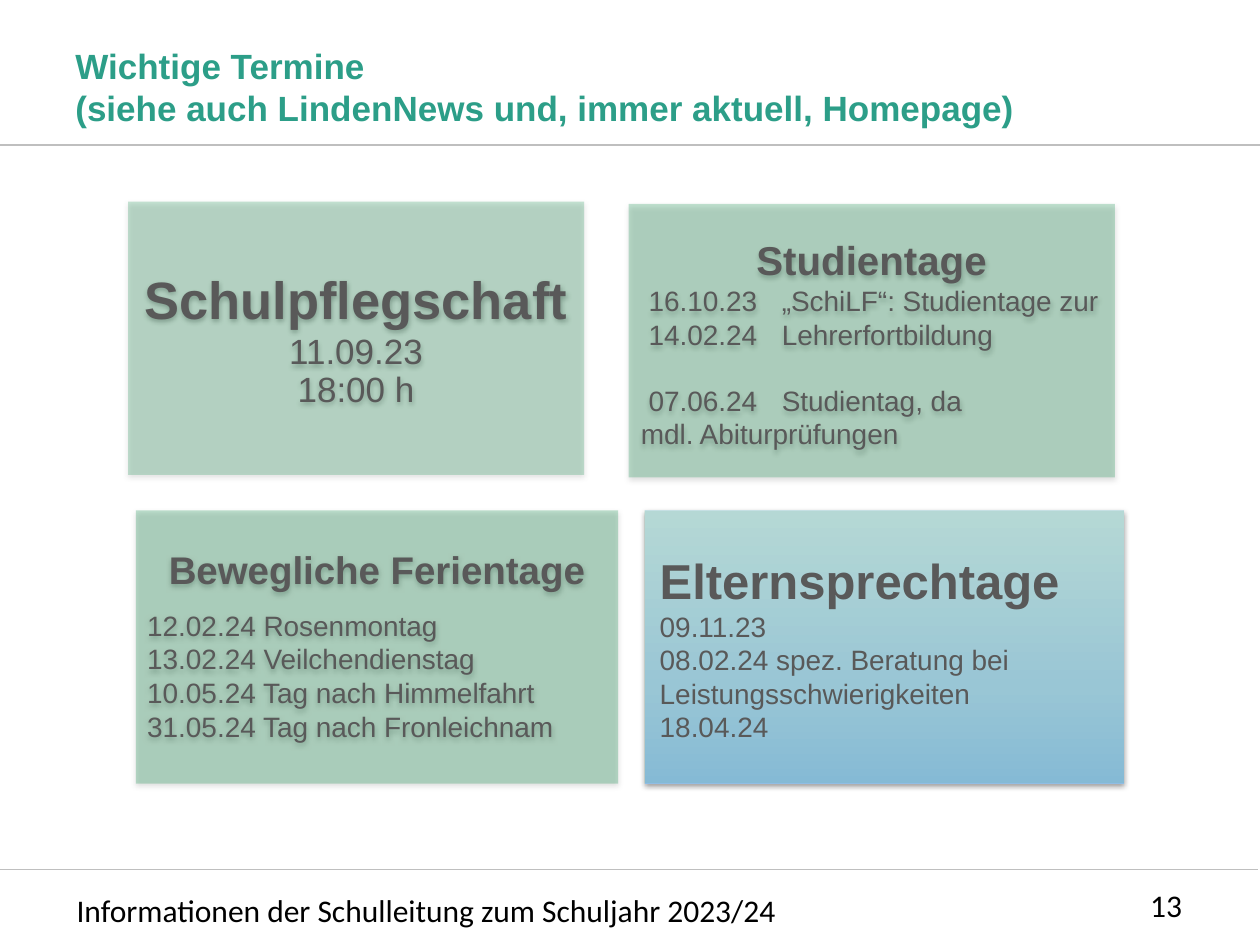
import pptx
import pptx.dml.color
import pptx.enum.shapes
import pptx.enum.text
import pptx.util
from dataclasses import dataclass
from lxml import etree
from pptx.oxml.ns import qn

Pt = pptx.util.Pt
Align = pptx.enum.text.PP_ALIGN
Anchor = pptx.enum.text.MSO_ANCHOR


@dataclass(frozen=True)
class Theme:
    title: str = "2C9E88"
    text: str = "595959"
    footer: str = "000000"
    rule: str = "BFBFBF"
    card: str = "38A26A"
    shadow: str = "000000"
    gradient: tuple = ((0, "A4C4FF"), (35, "BFD4FF"), (100, "E6EEFF"))
    font: str = "Arial"
    footer_font: str = "Calibri"
    title_size: int = 20
    date_size: int = 20
    body_size: int = 16
    footer_size: int = 18


THEME = Theme()
WIDTH, HEIGHT = 720, 540


def rgb(color):
    return pptx.dml.color.RGBColor.from_string(color)


def set_values(target, values):
    for name, value in values.items():
        setattr(target, name, value)


def add_node(parent, tag, **attributes):
    node = etree.SubElement(parent, qn(tag))
    for name, value in attributes.items():
        node.set(name, str(value))
    return node


def line(text, size, color=THEME.text, font=THEME.font, bold=False, tab=None, **layout):
    """Describe one paragraph of text."""
    style = {"size": Pt(size), "name": font, "bold": bold}
    return {"text": text, "style": style, "color": color, "tab": tab, "layout": layout}


def fill_text(shape, lines, anchor=Anchor.TOP, inset=(7.2, 3.6, 7.2, 3.6)):
    frame = shape.text_frame
    left, top, right, bottom = map(Pt, inset)
    set_values(frame, {"word_wrap": True, "vertical_anchor": anchor,
                       "margin_left": left, "margin_top": top,
                       "margin_right": right, "margin_bottom": bottom})
    for index, item in enumerate(lines):
        paragraph = frame.add_paragraph() if index else frame.paragraphs[0]
        set_values(paragraph, {"alignment": Align.LEFT, **item["layout"]})
        if item["tab"]:
            tabs = add_node(paragraph._p.get_or_add_pPr(), "a:tabLst")
            add_node(tabs, "a:tab", pos=int(Pt(item["tab"])), algn="l")
        run = paragraph.add_run()
        run.text = item["text"]
        set_values(run.font, item["style"])
        run.font.color.rgb = rgb(item["color"])


def add_text(slide, box, lines, **options):
    fill_text(slide.shapes.add_textbox(*map(Pt, box)), lines, **options)


def add_rule(slide, left, top, width):
    rule = slide.shapes.add_connector(
        pptx.enum.shapes.MSO_CONNECTOR.STRAIGHT, Pt(left), Pt(top), Pt(left + width), Pt(top))
    rule.line.color.rgb = rgb(THEME.rule)
    rule.line.width = Pt(1)
    add_node(rule._element.spPr, "a:effectLst")


def add_rectangle(slide, box):
    shape = slide.shapes.add_shape(
        pptx.enum.shapes.MSO_SHAPE.RECTANGLE, *map(Pt, box))
    shape.shadow.inherit = False
    shape.line.fill.background()
    return shape


def tint(shape, opacity):
    shape.fill.solid()
    shape.fill.fore_color.rgb = rgb(THEME.card)
    color = shape._element.spPr.find(".//" + qn("a:srgbClr"))
    add_node(color, "a:alpha", val=opacity * 1000)


def add_shadow(shape):
    effects = shape._element.spPr.find(qn("a:effectLst"))
    shadow = add_node(effects, "a:outerShdw", blurRad=int(Pt(3.1)), dist=int(Pt(1.6)),
                      dir=5400000, rotWithShape=0)
    color = add_node(shadow, "a:srgbClr", val=THEME.shadow)
    add_node(color, "a:alpha", val=38000)


def add_gradient(shape):
    """Shade from the first stop at the bottom to the last at the top."""
    shape.fill.gradient()
    gradient = shape._element.spPr.find(qn("a:gradFill"))
    for child in list(gradient):
        gradient.remove(child)
    stops = add_node(gradient, "a:gsLst")
    for position, color in THEME.gradient:
        stop = add_node(stops, "a:gs", pos=position * 1000)
        add_node(stop, "a:srgbClr", val=color)
    add_node(gradient, "a:lin", ang=16200000, scaled=0)


def add_card(slide, box, opacity, lines, inset, shaded=False):
    if shaded:
        backing = add_rectangle(slide, box)
        add_gradient(backing)
        add_shadow(backing)
    card = add_rectangle(slide, box)
    tint(card, opacity)
    if not shaded:
        add_shadow(card)
    fill_text(card, lines, Anchor.MIDDLE, inset)


def add_header(slide, box):
    left, top, width, height = box
    add_rule(slide, left, top + height, width)
    titles = ("Wichtige Termine", "(siehe auch LindenNews und, immer aktuell, Homepage)")
    add_text(slide, (left + 36, top + 21.6, width - 72, 55.4),
             [line(text, THEME.title_size, THEME.title, bold=True) for text in titles],
             anchor=Anchor.MIDDLE)


def add_dates(slide, box):
    left, top, width, height = box
    row_height = 156.2
    second_row = top + height - row_height
    body = THEME.body_size
    centered = {"alignment": Align.CENTER}
    tight = {**centered, "line_spacing": 0.9}

    # School council
    add_card(slide, (left, top, 260.6, row_height), 28, [
        line("Schulpflegschaft", 30, bold=True, **centered),
        line("11.09.23", THEME.date_size, **centered),
        line("18:00 h", THEME.date_size, **tight),
    ], (8.6,) * 4)

    # Study days
    add_card(slide, (left + 286, top + 1.4, 277.9, row_height), 31, [
        line("Studientage", 23, bold=True, **tight),
        line(" 16.10.23\t„SchiLF“: Studientage zur", body, tab=80.6),
        line(" 14.02.24\tLehrerfortbildung", body, tab=80.6),
        line(" 07.06.24\tStudientag, da", body, tab=80.6, space_before=Pt(18.4)),
        line("mdl. Abiturprüfungen", body),
    ], (7, 12.4, 7, 7))

    # Movable holidays
    holidays = ("12.02.24 Rosenmontag", "13.02.24 Veilchendienstag",
                "10.05.24 Tag nach Himmelfahrt", "31.05.24 Tag nach Fronleichnam")
    add_card(slide, (left + 4.4, second_row, 275.6, row_height), 32, [
        line("Bewegliche Ferientage", 22, bold=True, space_after=Pt(9), **tight),
        *[line(text, body) for text in holidays],
    ], (6.5,) * 4)

    # Parents' days
    meetings = ("09.11.23", "08.02.24 spez. Beratung bei Leistungsschwierigkeiten", "18.04.24")
    add_card(slide, (left + 295.2, second_row, 273.9, row_height), 28, [
        line("Elternsprechtage", 28, bold=True),
        *[line(text, body) for text in meetings],
    ], (8.6,) * 4, shaded=True)


def add_footer(slide, box):
    left, top, width, height = box
    style = {"size": THEME.footer_size, "color": THEME.footer, "font": THEME.footer_font}
    add_rule(slide, left, top, width - 1.4)
    add_text(slide, (left + 36.7, top + 8.7, 460, 29),
             [line("Informationen der Schulleitung zum Schuljahr 2023/24", **style)])
    add_text(slide, (left + 514.8, top + 5.8, 167.8, 29),
             [line("13", alignment=Align.RIGHT, **style)])


def main():
    presentation = pptx.Presentation()
    set_values(presentation, {"slide_width": Pt(WIDTH), "slide_height": Pt(HEIGHT)})
    slide = presentation.slides.add_slide(presentation.slide_layouts[6])
    add_header(slide, (0, 0, WIDTH, 82.8))
    add_dates(slide, (73.2, 115.2, 569.1, 332.6))
    add_footer(slide, (0, 496.8, WIDTH, 43.2))
    presentation.save("out.pptx")


if __name__ == "__main__":
    main()
